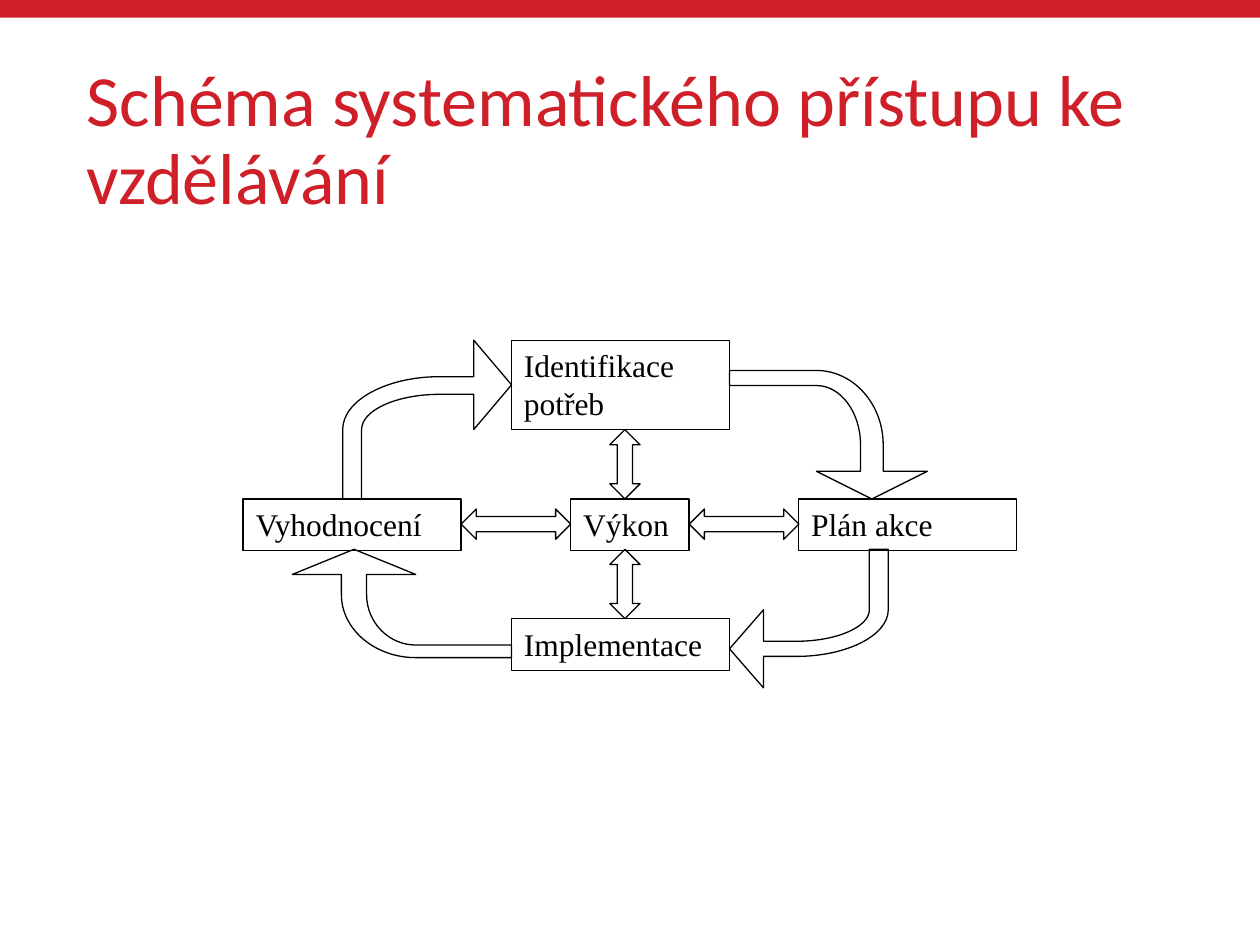
from lxml.etree import SubElement
from pptx import Presentation
from pptx.dml.color import RGBColor
from pptx.enum.shapes import MSO_SHAPE
from pptx.enum.text import MSO_ANCHOR, MSO_AUTO_SIZE, PP_ALIGN
from pptx.oxml.ns import qn
from pptx.util import Inches, Pt

TITLE = "Schéma systematického přístupu ke vzdělávání"
THEME = {
    "red": RGBColor(0xCF, 0x1F, 0x28),
    "ink": RGBColor(0, 0, 0),
    "head": ("Calibri", 41.2),
    "body": ("Times New Roman", 18),
    "line": 0.75,
}
SIDE, CORE, LOW, TALL = 1.73, 0.94, 0.41, 0.71
GAP, DROP, THICK = 0.87, 0.55, 0.24
LEFT, TOP, MID_X, AXIS = 1.93, 2.7, 4.06, 4.96
CORE_X = LEFT + SIDE + GAP
RIGHT = CORE_X + CORE + GAP
MID_Y = TOP + TALL + DROP
BASE_Y = MID_Y + 0.4 + DROP
LEVEL = MID_Y + 0.2
CURVE = 0.55

BOXES = [
    ("Implementace", MID_X, BASE_Y, SIDE, LOW),
    ("Plán akce", RIGHT, MID_Y, SIDE, LOW),
    ("Identifikace potřeb", MID_X, TOP, SIDE, TALL),
    ("Vyhodnocení", LEFT, MID_Y, SIDE, LOW),
    ("Výkon", CORE_X, MID_Y, CORE, LOW),
]
LINKS = [
    (AXIS, MID_Y - DROP / 2, DROP, 0, 0.468),
    (RIGHT - GAP / 2, LEVEL, GAP, 90, 0.734),
    (CORE_X - GAP / 2, LEVEL, GAP, 90, 0.734),
    (AXIS, BASE_Y - DROP / 2, DROP, 0, 0.468),
]
BENDS = [
    {"down": True, "tip": 3.96, "neck": 3.74, "turn": 3.53, "foot": 5.79,
     "stem": (2.94, 3.06), "head": (7.36, 6.48), "shaft": (7.01, 6.83)},
    {"down": False, "tip": 5.79, "neck": 6.06, "turn": 6.32, "foot": 4.36,
     "stem": (7.05, 6.9), "head": (5.46, 4.84), "shaft": (5.21, 5.09)},
    {"down": True, "tip": 4.36, "neck": 4.56, "turn": 4.72, "foot": 4.06,
     "stem": (5.22, 5.12), "head": (2.32, 3.3), "shaft": (2.71, 2.91)},
    {"down": False, "tip": 4.06, "neck": 3.76, "turn": 3.49, "foot": 3.96,
     "stem": (2.72, 2.87), "head": (2.7, 3.41), "shaft": (2.99, 3.13)},
]


def place(x, y, w, h):
    """Turn a frame in inches into lengths."""
    return [Inches(round(n, 3)) for n in (x, y, w, h)]


def ink(shape):
    """Give a shape a thin outline and no fill."""
    shape.shadow.inherit = False
    shape.fill.background()
    shape.line.color.rgb = THEME["ink"]
    shape.line.width = Pt(THEME["line"])


def write(shape, text, style, color, anchor):
    """Put left-aligned text in a shape and return its paragraph."""
    frame = shape.text_frame
    frame.word_wrap = True
    frame.vertical_anchor = anchor
    frame.text = text
    para = frame.paragraphs[0]
    para.alignment = PP_ALIGN.LEFT
    font = para.runs[0].font
    font.name, size = style
    font.size = Pt(size)
    font.color.rgb = color
    return para


def side(bend, n):
    """List one side of a bent arrow, with the handles of its curve."""
    turn, hub = bend["turn"], bend["head"][1]
    stem, shaft = bend["stem"][n], bend["shaft"][n]
    return [(bend["neck"], bend["head"][n]), (bend["neck"], shaft),
            (turn, shaft), (turn + (stem - turn) * CURVE, shaft),
            (stem, hub + (shaft - hub) * CURVE), (stem, hub),
            (stem, bend["foot"])]


def bow(shape, starts):
    """Join each three lines from the given starts into one curve."""
    lines = list(shape._element.iter(qn("a:lnTo")))
    for start in starts:
        trio = lines[start:start + 3]
        track = trio[0].getparent()
        arc = SubElement(track, qn("a:cubicBezTo"))
        track.replace(trio[0], arc)
        for line in trio:
            arc.append(line[0])
        for line in trio[1:]:
            track.remove(line)


def curve(shapes, bend):
    """Draw one bent arrow."""
    tip = (bend["tip"], sum(bend["head"]) / 2)
    points = [tip, *side(bend, 0), *reversed(side(bend, 1))]
    if bend["down"]:
        points = [(x, y) for y, x in points]
    points = [(Inches(x), Inches(y)) for x, y in points]
    form = shapes.build_freeform(*points[0])
    form.add_line_segments(points[1:], close=True)
    shape = form.convert_to_shape()
    bow(shape, (3, 9))
    ink(shape)


def main():
    """Build the slide and save it."""
    deck = Presentation()
    deck.slide_width, deck.slide_height = Inches(10), Inches(7.5)
    shapes = deck.slides.add_slide(deck.slide_layouts[6]).shapes

    band = shapes.add_shape(MSO_SHAPE.RECTANGLE, *place(0, 0, 10, 0.14))
    band.shadow.inherit = False
    band.fill.solid()
    band.fill.fore_color.rgb = THEME["red"]
    band.line.fill.background()

    title = shapes.add_textbox(*place(0.59, 0.4, 8.82, 1.45))
    para = write(title, TITLE, THEME["head"], THEME["red"], MSO_ANCHOR.MIDDLE)
    para.line_spacing = 0.9

    for text, *frame in BOXES:
        box = shapes.add_shape(MSO_SHAPE.RECTANGLE, *place(*frame))
        ink(box)
        write(box, text, THEME["body"], THEME["ink"], MSO_ANCHOR.TOP)
        box.text_frame.auto_size = MSO_AUTO_SIZE.SHAPE_TO_FIT_TEXT

    for x, y, span, turn, head in LINKS:
        frame = place(x - THICK / 2, y - span / 2, THICK, span)
        link = shapes.add_shape(MSO_SHAPE.UP_DOWN_ARROW, *frame)
        link.adjustments[0], link.adjustments[1] = head, 0.5
        link.rotation = turn
        ink(link)

    for bend in BENDS:
        curve(shapes, bend)

    deck.save("out.pptx")


if __name__ == "__main__":
    main()
